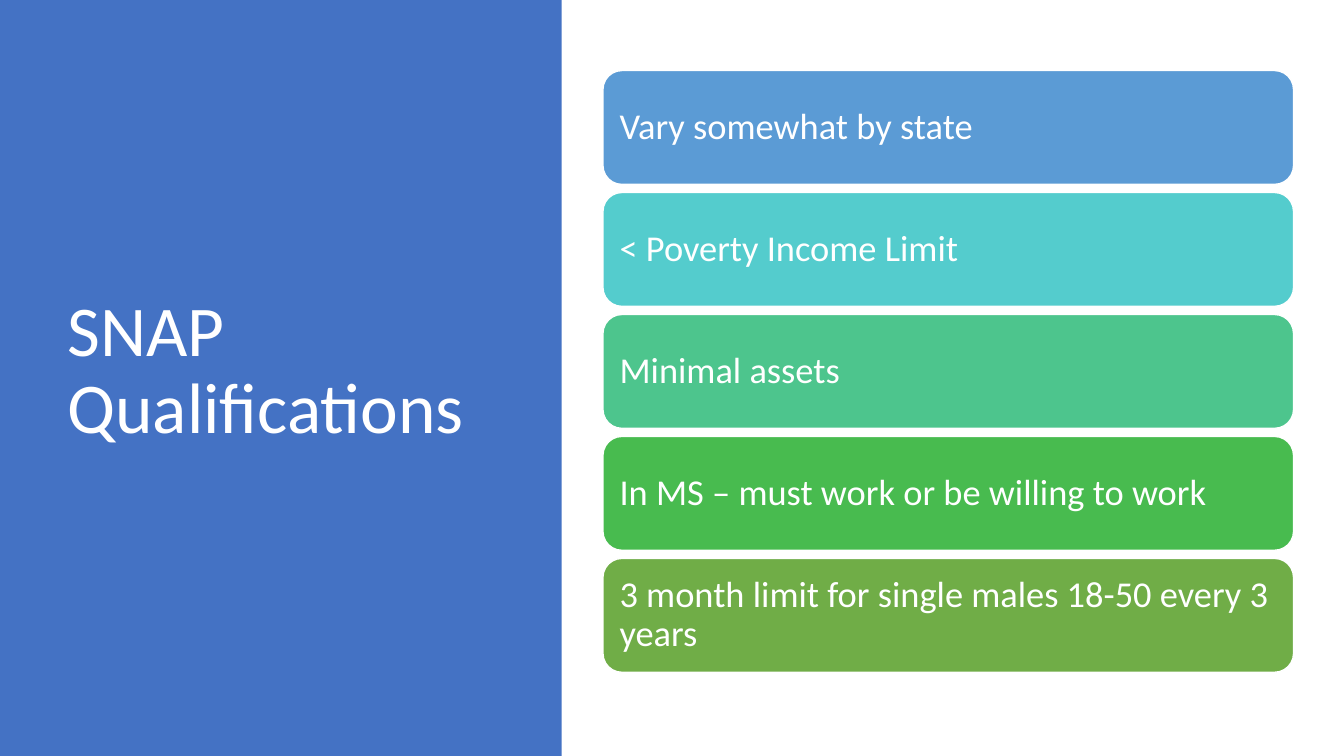
from pptx import Presentation
from pptx.dml.color import RGBColor
from pptx.enum import shapes, text
from pptx.util import Inches, Pt

TITLE = "SNAP Qualifications"
QUALIFICATIONS = [
    ("Vary somewhat by state", "5B9BD5"),
    ("< Poverty Income Limit", "54CCCD"),
    ("Minimal assets", "4DC58D"),
    ("In MS – must work or be willing to work", "48BB4F"),
    ("3 month limit for single males 18-50 every 3 years", "70AD47"),
]
THEME = {
    "font": "Calibri",
    "panel": "4472C4",
    "light": "FFFFFF",
    "title_size": 51,
    "card_size": 26,
    "line_spacing": 0.9,
}

SLIDE_WIDTH, SLIDE_HEIGHT = 13.33, 7.5
PANEL_WIDTH = 5.57
TITLE_BOX = (0.57, 0.68, 4.16, 6.02)
CARD_LEFT, CARD_TOP = 5.98, 0.7
CARD_WIDTH, CARD_HEIGHT = 6.85, 1.13
CARD_PITCH = 1.21
CARD_INSET = 0.11


def color(name):
    return RGBColor.from_string(name)


def add_block(slide, kind, box, fill):
    """Add a filled shape without shadow or outline."""
    shape = slide.shapes.add_shape(kind, *map(Inches, box))
    shape.shadow.inherit = False
    shape.fill.solid()
    shape.fill.fore_color.rgb = color(fill)
    shape.line.fill.background()
    return shape


def write(shape, words, size):
    """Set left-aligned, vertically centred light text."""
    frame = shape.text_frame
    frame.text = words
    frame.word_wrap = True
    frame.vertical_anchor = text.MSO_ANCHOR.MIDDLE
    paragraph = frame.paragraphs[0]
    paragraph.alignment = text.PP_ALIGN.LEFT
    paragraph.line_spacing = THEME["line_spacing"]
    font = paragraph.runs[0].font
    font.name = THEME["font"]
    font.size = Pt(size)
    font.color.rgb = color(THEME["light"])
    return frame


def add_card(slide, index, words, fill):
    box = (CARD_LEFT, CARD_TOP + index * CARD_PITCH, CARD_WIDTH, CARD_HEIGHT)
    card = add_block(slide, shapes.MSO_SHAPE.ROUNDED_RECTANGLE, box, fill)
    card.line.color.rgb = color(THEME["light"])
    card.line.width = Pt(1)
    frame = write(card, words, THEME["card_size"])
    frame.margin_left = frame.margin_right = Inches(CARD_INSET)
    frame.margin_top = frame.margin_bottom = Inches(CARD_INSET)


def main():
    presentation = Presentation()
    presentation.slide_width = Inches(SLIDE_WIDTH)
    presentation.slide_height = Inches(SLIDE_HEIGHT)
    slide = presentation.slides.add_slide(presentation.slide_layouts[6])

    panel = (0, 0, PANEL_WIDTH, SLIDE_HEIGHT)
    add_block(slide, shapes.MSO_SHAPE.RECTANGLE, panel, THEME["panel"])
    title = slide.shapes.add_textbox(*map(Inches, TITLE_BOX))
    write(title, TITLE, THEME["title_size"])

    for index, (words, fill) in enumerate(QUALIFICATIONS):
        add_card(slide, index, words, fill)

    presentation.save("out.pptx")


if __name__ == "__main__":
    main()
